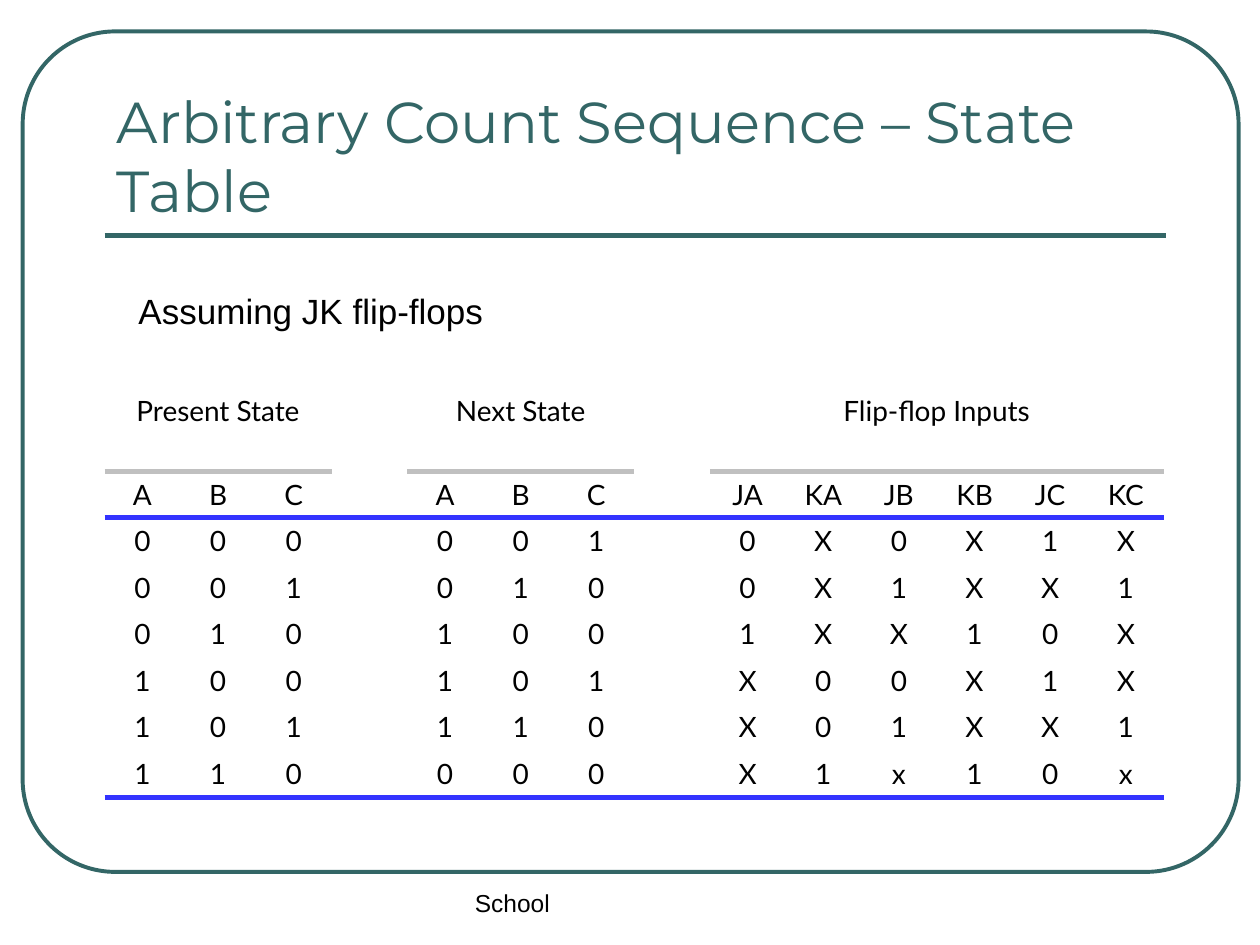
import pptx
import pptx.dml.color
import pptx.enum.shapes
import pptx.enum.text
import pptx.oxml.ns
import pptx.util
from dataclasses import dataclass
from lxml import etree

Inches = pptx.util.Inches
Pt = pptx.util.Pt
qn = pptx.oxml.ns.qn
Anchor = pptx.enum.text.MSO_ANCHOR


@dataclass(frozen=True)
class Theme:
    teal: str = "336666"
    black: str = "000000"
    group_rule: str = "C0C0C0"
    table_rule: str = "3333FF"
    title_font: str = "Montserrat"
    body_font: str = "Arial"
    table_font: str = "Lato"
    title_size: int = 33
    body_size: int = 20
    table_size: int = 16
    footer_size: int = 14
    rule_width: int = 3
    frame_width: float = 2.25


THEME = Theme()
NO_STYLE = "{2D5ABB26-0587-4C30-8999-92F81FD0307C}"
LEFT, WIDTH = 0.83, 8.41

# Heading of each column group with its first and last column
GROUPS = [("Present State", 0, 2), ("Next State", 4, 6), ("Flip-flop Inputs", 8, 13)]

# Column names, then one row per state; "|" stands for the gap between groups
STATE_ROWS = [
    "A B C | A B C | JA KA JB KB JC KC",
    "0 0 0 | 0 0 1 | 0 X 0 X 1 X",
    "0 0 1 | 0 1 0 | 0 X 1 X X 1",
    "0 1 0 | 1 0 0 | 1 X X 1 0 X",
    "1 0 0 | 1 0 1 | X 0 0 X 1 X",
    "1 0 1 | 1 1 0 | X 0 1 X X 1",
    "1 1 0 | 0 0 0 | X 1 x 1 0 x",
]


def rgb(color):
    return pptx.dml.color.RGBColor.from_string(color)


def style_paragraph(para, font, size, color):
    para.font.name = font
    para.font.size = Pt(size)
    para.font.color.rgb = rgb(color)


def add_text(page, text, place, font, size, color, anchor=Anchor.TOP, before=0):
    box = page.shapes.add_textbox(*map(Inches, place))
    frame = box.text_frame
    frame.word_wrap = True
    frame.vertical_anchor = anchor
    para = frame.paragraphs[0]
    para.text = text
    para.space_before = Pt(before)
    style_paragraph(para, font, size, color)


def add_frame(page):
    frame = page.shapes.add_shape(
        pptx.enum.shapes.MSO_SHAPE.ROUNDED_RECTANGLE,
        Inches(0.18), Inches(0.25), Inches(9.65), Inches(6.67))
    frame.adjustments[0] = 0.11
    frame.shadow.inherit = False
    frame.fill.background()
    frame.line.color.rgb = rgb(THEME.teal)
    frame.line.width = Pt(THEME.frame_width)


def add_title_rule(page):
    rule = page.shapes.add_connector(
        pptx.enum.shapes.MSO_CONNECTOR.STRAIGHT,
        Inches(LEFT), Inches(1.87), Inches(9.25), Inches(1.87))
    rule.line.color.rgb = rgb(THEME.teal)
    rule.line.width = Pt(THEME.rule_width)
    etree.SubElement(rule._element.spPr, qn("a:effectLst"))


def set_borders(cell, top, bottom):
    """Rule the top and bottom in the given colours; None leaves a side bare."""
    for side, color in (("L", None), ("R", None), ("T", top), ("B", bottom)):
        line = etree.SubElement(cell._tc.get_or_add_tcPr(), qn("a:ln" + side))
        if color is None:
            etree.SubElement(line, qn("a:noFill"))
        else:
            line.set("w", str(Pt(THEME.rule_width)))
            fill = etree.SubElement(line, qn("a:solidFill"))
            etree.SubElement(fill, qn("a:srgbClr"), val=color)


def format_cell(cell, text):
    cell.margin_left = cell.margin_right = Inches(0.12)
    cell.margin_top = cell.margin_bottom = Inches(0.05)
    para = cell.text_frame.paragraphs[0]
    para.alignment = pptx.enum.text.PP_ALIGN.CENTER
    if text:
        para.text = text
    else:
        # Keeps an empty cell from stretching its row
        para._p.get_or_add_endParaRPr().set("sz", str(THEME.table_size * 100))
    style_paragraph(para, THEME.table_font, THEME.table_size, THEME.black)


def add_state_table(page):
    headings = {first: name for name, first, last in GROUPS}
    grouped = {column for name, first, last in GROUPS
               for column in range(first, last + 1)}
    columns = len(STATE_ROWS[0].split())
    rows = [[headings.get(column, "") for column in range(columns)]]
    rows += [line.replace("|", "-").split() for line in STATE_ROWS]
    heights = [0.66] + [0.37] * len(STATE_ROWS)

    table_frame = page.shapes.add_table(
        len(rows), columns, Inches(LEFT), Inches(3.08),
        Inches(WIDTH), Inches(sum(heights)))
    table = table_frame.table
    table.first_row = table.horz_banding = False
    table._tbl.tblPr.find(qn("a:tableStyleId")).text = NO_STYLE
    for column in table.columns:
        column.width = Inches(WIDTH / columns)
    for row, height in zip(table.rows, heights):
        row.height = Inches(height)

    # Rule under each row: grey below the groups, blue around the states
    blue_rules = {1: THEME.table_rule, len(rows) - 1: THEME.table_rule}
    grouped_rules = {0: THEME.group_rule, **blue_rules}
    for r, values in enumerate(rows):
        for c, value in enumerate(values):
            cell = table.cell(r, c)
            format_cell(cell, "" if value == "-" else value)
            rules = grouped_rules if c in grouped else blue_rules
            set_borders(cell, rules.get(r - 1), rules.get(r))
            cell.fill.background()
    for name, first, last in GROUPS:
        table.cell(0, first).merge(table.cell(0, last))


def main():
    deck = pptx.Presentation()
    deck.slide_width, deck.slide_height = Inches(10), Inches(7.5)
    page = deck.slides.add_slide(deck.slide_layouts[6])

    # Frame and title
    add_frame(page)
    add_title_rule(page)
    add_text(page, "Arbitrary Count Sequence – State Table",
             (LEFT, 0.58, WIDTH, 1.25), THEME.title_font, THEME.title_size,
             THEME.teal, anchor=Anchor.BOTTOM)

    # State table and its assumption
    add_state_table(page)
    add_text(page, "Assuming JK flip-flops", (1, 2.25, 5.42, 0.92),
             THEME.body_font, THEME.body_size, THEME.black, before=7.8)

    # Footer
    add_text(page, "School", (3.67, 7, 3.16, 0.5),
             THEME.body_font, THEME.footer_size, THEME.black)
    deck.save("out.pptx")


if __name__ == "__main__":
    main()
